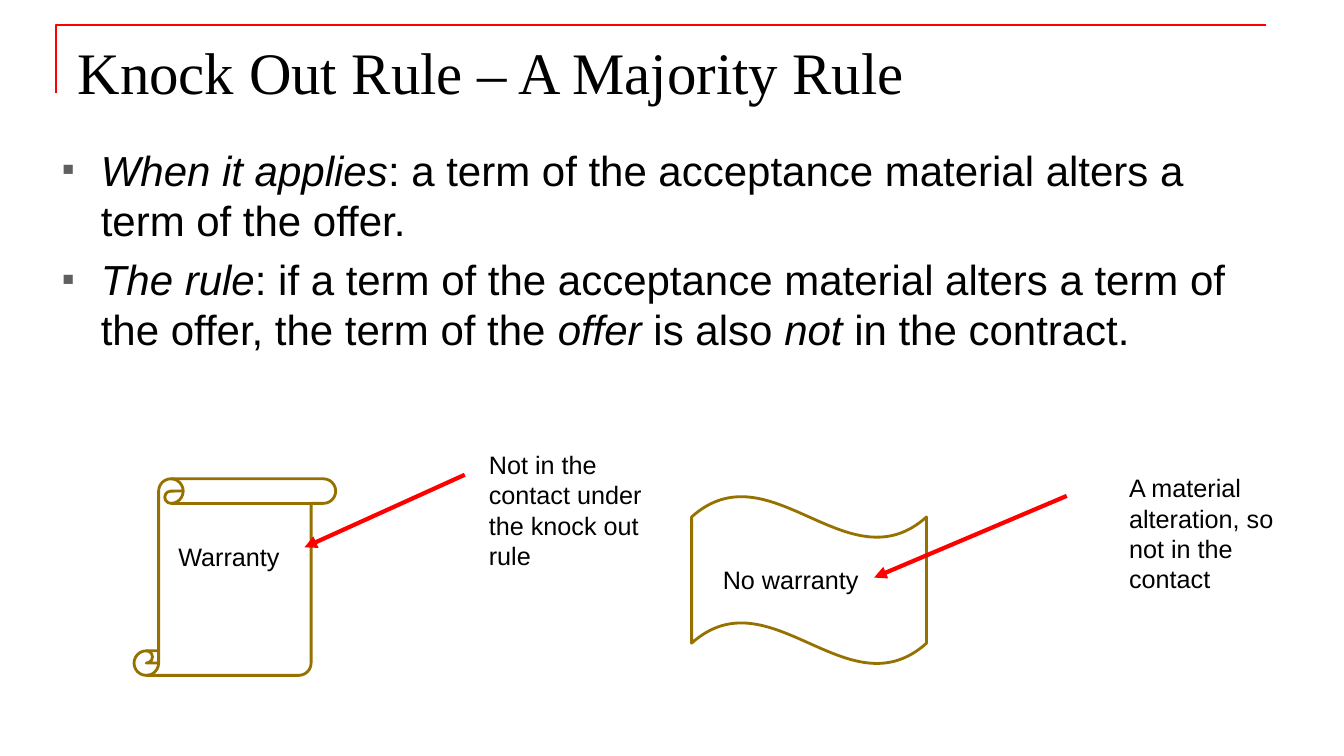
from dataclasses import dataclass

from lxml.etree import SubElement
from pptx import Presentation
from pptx.dml.color import RGBColor
from pptx.enum.shapes import MSO_CONNECTOR, MSO_SHAPE
from pptx.enum.text import MSO_ANCHOR, MSO_AUTO_SIZE, PP_ALIGN
from pptx.oxml.ns import qn
from pptx.shapes.autoshape import Shape
from pptx.slide import Slide
from pptx.text.text import Font
from pptx.util import Inches, Pt


@dataclass(frozen=True)
class Theme:
    text: RGBColor = RGBColor(0x00, 0x00, 0x00)
    accent: RGBColor = RGBColor(0xFF, 0x00, 0x00)
    document: RGBColor = RGBColor(0x97, 0x71, 0x00)
    bullet: str = "5F5F5F"
    heading_font: str = "Times New Roman"
    body_font: str = "Arial"
    title_size: int = 42
    body_size: int = 30
    label_size: int = 18


@dataclass(frozen=True)
class Box:
    left: float
    top: float
    width: float
    height: float


@dataclass(frozen=True)
class Document:
    outline: MSO_SHAPE
    box: Box


@dataclass(frozen=True)
class Label:
    text: str
    box: Box


@dataclass(frozen=True)
class Arrow:
    start: tuple[float, float]
    end: tuple[float, float]


@dataclass(frozen=True)
class Phrase:
    text: str
    italic: bool = False


THEME = Theme()
TITLE = Label("Knock Out Rule – A Majority Rule", Box(0.67, 0.3, 12, 1.25))
RULES_BOX = Box(0.52, 1.38, 12, 4.95)
RULES = [
    [
        Phrase("When it applies", True),
        Phrase(": a term of the acceptance material alters a term of the offer."),
    ],
    [
        Phrase("The rule", True),
        Phrase(": if a term of the acceptance material alters a term of the offer, the term of the "),
        Phrase("offer", True),
        Phrase(" is also "),
        Phrase("not", True),
        Phrase(" in the contract."),
    ],
]
DOCUMENTS = [
    Document(MSO_SHAPE.VERTICAL_SCROLL, Box(1.33, 4.75, 2, 1.95)),
    Document(MSO_SHAPE.WAVE, Box(6.86, 4.92, 2.33, 1.67)),
]
LABELS = [
    Label("Warranty", Box(1.67, 5.32, 1.33, 0.4)),
    Label("No warranty", Box(7.07, 5.55, 1.92, 0.4)),
    Label("A material alteration, so not in the contact", Box(11.1, 4.64, 1.81, 1.31)),
    Label("Not in the contact under the knock out rule", Box(4.75, 4.41, 1.81, 1.31)),
]
ARROWS = [
    Arrow((10.58, 4.92), (8.67, 5.73)),
    Arrow((4.61, 4.71), (3.02, 5.43)),
]


def lengths(box: Box) -> tuple[Inches, ...]:
    return tuple(Inches(v) for v in (box.left, box.top, box.width, box.height))


def style_font(font: Font, name: str, size: int) -> None:
    font.name = name
    font.size = Pt(size)
    font.color.rgb = THEME.text


def prepare_placeholder(placeholder: Shape, box: Box) -> None:
    placeholder.left, placeholder.top, placeholder.width, placeholder.height = lengths(box)
    frame = placeholder.text_frame
    frame.word_wrap = True
    frame.auto_size = MSO_AUTO_SIZE.NONE
    frame.vertical_anchor = MSO_ANCHOR.TOP


def add_title(slide: Slide) -> None:
    title = slide.shapes.title
    prepare_placeholder(title, TITLE.box)
    title.text_frame.text = TITLE.text
    heading = title.text_frame.paragraphs[0]
    heading.alignment = PP_ALIGN.LEFT
    style_font(heading.font, THEME.heading_font, THEME.title_size)


def add_rules(slide: Slide) -> None:
    body = slide.placeholders[1]
    prepare_placeholder(body, RULES_BOX)
    frame = body.text_frame
    for index, phrases in enumerate(RULES):
        rule = frame.add_paragraph() if index else frame.paragraphs[0]
        properties = rule._p.get_or_add_pPr()
        properties.set("marL", str(Inches(0.38)))
        properties.set("indent", str(Inches(-0.38)))
        bullet_color = SubElement(properties, qn("a:buClr"))
        SubElement(bullet_color, qn("a:srgbClr"), val=THEME.bullet)
        SubElement(properties, qn("a:buSzPct"), val="45000")
        SubElement(properties, qn("a:buFont"), typeface=THEME.body_font)
        SubElement(properties, qn("a:buChar"), char="■")
        rule.space_before = Pt(6)
        style_font(rule.font, THEME.body_font, THEME.body_size)
        for phrase in phrases:
            run = rule.add_run()
            run.text = phrase.text
            run.font.italic = phrase.italic


def add_corner_rule(slide: Slide) -> None:
    builder = slide.shapes.build_freeform(Inches(0.56), Inches(0.92))
    builder.add_line_segments(
        [(Inches(0.56), Inches(0.25)), (Inches(12.56), Inches(0.25))], close=False
    )
    outline_only(builder.convert_to_shape(), THEME.accent, 1.5)


def outline_only(shape: Shape, color: RGBColor, weight: float) -> None:
    shape.shadow.inherit = False
    shape.fill.background()
    shape.line.color.rgb = color
    shape.line.width = Pt(weight)


def add_document(slide: Slide, document: Document) -> None:
    shape = slide.shapes.add_shape(document.outline, *lengths(document.box))
    outline_only(shape, THEME.document, 2)


def add_label(slide: Slide, label: Label) -> None:
    frame = slide.shapes.add_textbox(*lengths(label.box)).text_frame
    frame.word_wrap = True
    frame.auto_size = MSO_AUTO_SIZE.SHAPE_TO_FIT_TEXT
    frame.text = label.text
    style_font(frame.paragraphs[0].font, THEME.body_font, THEME.label_size)


def add_arrow(slide: Slide, arrow: Arrow) -> None:
    ends = [Inches(v) for v in (*arrow.start, *arrow.end)]
    connector = slide.shapes.add_connector(MSO_CONNECTOR.STRAIGHT, *ends)
    connector.line.color.rgb = THEME.accent
    connector.line.width = Pt(3)
    SubElement(connector.line._get_or_add_ln(), qn("a:tailEnd"), type="triangle")
    SubElement(connector._element.spPr, qn("a:effectLst"))


def main() -> None:
    presentation = Presentation()
    presentation.slide_width = Inches(13.33)
    presentation.slide_height = Inches(7.5)
    slide = presentation.slides.add_slide(presentation.slide_layouts[1])
    add_corner_rule(slide)
    add_title(slide)
    add_rules(slide)
    for document in DOCUMENTS:
        add_document(slide, document)
    for label in LABELS:
        add_label(slide, label)
    for arrow in ARROWS:
        add_arrow(slide, arrow)
    presentation.save("out.pptx")


if __name__ == "__main__":
    main()
